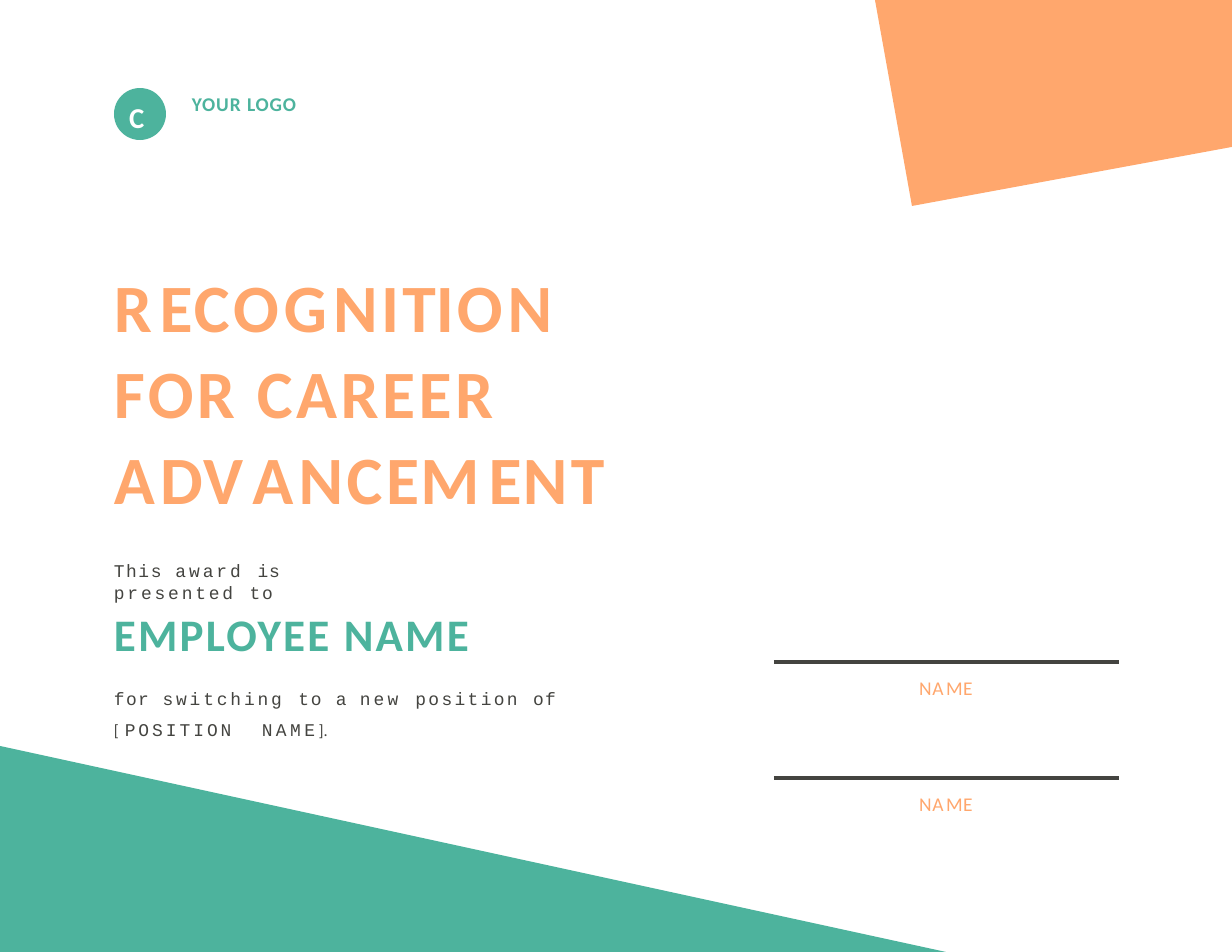
from dataclasses import dataclass

from pptx import Presentation
from pptx.dml.color import RGBColor
from pptx.enum.shapes import MSO_CONNECTOR, MSO_SHAPE
from pptx.oxml.ns import qn
from pptx.util import Pt
from lxml.etree import SubElement

PX = 914400 / 112


@dataclass(frozen=True)
class Style:
    size: float
    color: RGBColor
    name: str = "Calibri"
    bold: bool = False


class Theme:
    orange = RGBColor.from_string("FFA76D")
    green = RGBColor.from_string("4DB39D")
    dark = RGBColor.from_string("444440")
    white = RGBColor.from_string("FFFFFF")
    title = Style(43.5, orange, bold=True)
    employee = Style(29, green, bold=True)
    body = Style(11.5, dark, "Courier New")
    bracket = Style(10.5, dark)
    logo = Style(12.5, green, bold=True)
    monogram = Style(18.5, white, bold=True)
    signer = Style(12.5, orange)


BREAK = None

TITLE_TOP = [("R", 4.8), ("E", 0.7), ("C", 2.3), ("O", 3.2), ("G", 3.8), ("N", 2.3),
             ("I", 1.9), ("T", -2.3), ("I", 1.9), ("O", 3.2), ("N", -0.5), BREAK,
             ("FOR ", 2.1), ("CAREER", 2.2)]
TITLE_END = [("A", 3.2), ("D", 0.3), ("V", 5.9), ("A", 3.2), ("NC", 2.3), ("E", 0.7),
             ("M", 5.8), ("E", 0.7), ("N", 2.3), ("T", -5.3)]
PRESENTED = [("This ", 1), ("award ", 1.9), ("is", 0.5), BREAK,
             ("presented ", 1.8), ("to", 1.1)]
REASON = [("for ", 0.9), ("switching ", 1.8), ("to ", 1.1), ("a ", 0.8), ("new ", 2),
          ("position ", 1.5), ("of", 0.8), BREAK,
          ("[ ", 0.7, Theme.bracket), ("POSITION", 1.9), (" ", 10.7), ("NAME", 2.2),
          ("].", 0, Theme.bracket)]
SIGNER = [("N", 0.6), ("A", 1.6), ("M", 0.2), ("E", 0.8)]


def px(n):
    return round(n * PX)


def set_font(font, style):
    font.size, font.name, font.bold = Pt(style.size), style.name, style.bold
    font.color.rgb = style.color


def paint(sp, color):
    sp.shadow.inherit = False
    sp.fill.solid()
    sp.fill.fore_color.rgb = color
    sp.line.fill.background()


def add_runs(p, runs, style):
    """Fill a paragraph with (text, letter spacing in pt[, own style]) runs."""
    set_font(p.font, style)
    for run in runs:
        if run is BREAK:
            p.add_line_break()
            continue
        text, spacing, *own = run
        r = p.add_run()
        r.text = text
        if own:
            set_font(r.font, own[0])
        r.font._element.set("spc", str(round(spacing * 100)))


def add_text(slide, x, y, w, h, *paragraphs):
    """Each paragraph is (runs, style, space before in pt, line spacing)."""
    tf = slide.shapes.add_textbox(px(x), px(y), px(w), px(h)).text_frame
    tf.word_wrap = True
    tf.margin_left = tf.margin_top = tf.margin_right = tf.margin_bottom = 0
    for i, (runs, style, before, leading) in enumerate(paragraphs):
        p = tf.add_paragraph() if i else tf.paragraphs[0]
        p.line_spacing = leading
        if before:
            p.space_before = Pt(before)
        add_runs(p, runs, style)


def add_polygon(slide, points, color):
    builder = slide.shapes.build_freeform(*points[0], scale=PX)
    builder.add_line_segments(points[1:], close=True)
    paint(builder.convert_to_shape(), color)


def add_logo(slide):
    disc = slide.shapes.add_shape(MSO_SHAPE.OVAL, px(114), px(88), px(52), px(52))
    paint(disc, Theme.green)
    add_text(slide, 129, 100, 25, 36, ([("C", -0.2)], Theme.monogram, 0, 1.0))
    add_text(slide, 192, 92, 140, 26,
             ([("YOUR ", 0.6), ("LOGO", 0.5)], Theme.logo, 0, 1.0))


def add_signature(slide, y):
    line = slide.shapes.add_connector(
        MSO_CONNECTOR.STRAIGHT, px(774), px(y), px(1119), px(y))
    line.line.color.rgb = Theme.dark
    line.line.width = Pt(2.25)
    SubElement(line._element.spPr, qn("a:effectLst"))
    add_text(slide, 919, y + 14, 60, 26, (SIGNER, Theme.signer, 0, 1.0))


def main():
    prs = Presentation()
    prs.slide_width, prs.slide_height = px(1232), px(952)
    s = prs.slides.add_slide(prs.slide_layouts[6])

    add_text(s, 114, 260, 606, 260,
             (TITLE_TOP, Theme.title, 0, 1.06), (TITLE_END, Theme.title, 3.3, 1.0))
    add_text(s, 114, 560, 300, 42, (PRESENTED, Theme.body, 0, 1.0))
    add_text(s, 114, 606, 507, 136,
             ([("EMPLOYEE NAME", 1.4)], Theme.employee, 0, 1.0),
             (REASON, Theme.body, 11.2, 1.47))
    add_polygon(s, [(0, 746), (946, 952), (0, 952)], Theme.green)
    add_polygon(s, [(912, 206), (875, 0), (1232, 0), (1232, 147)], Theme.orange)
    add_logo(s)
    for y in (662, 778):
        add_signature(s, y)

    prs.save("out.pptx")


if __name__ == "__main__":
    main()
